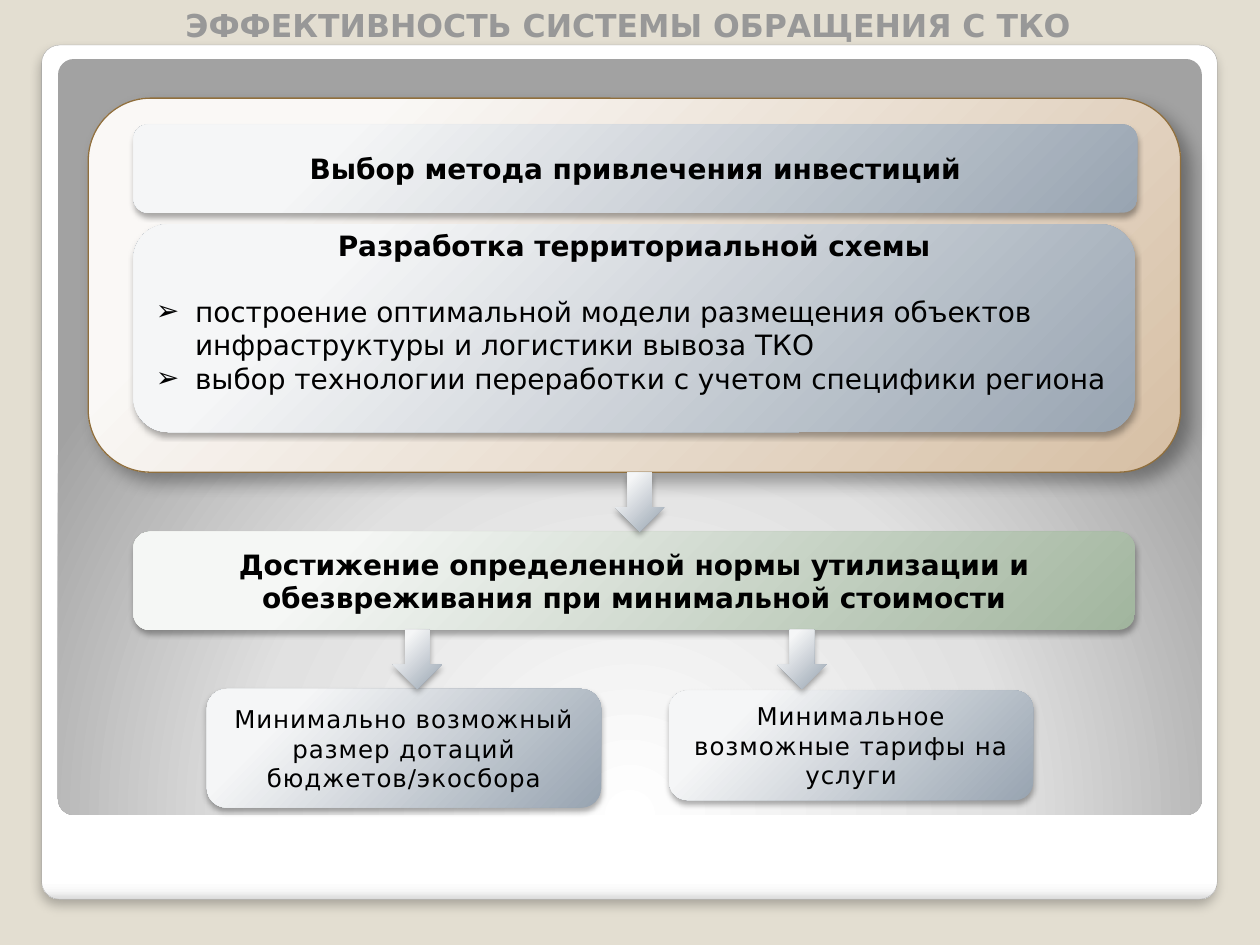
from pptx import Presentation
from pptx.dml.color import RGBColor
from pptx.enum.shapes import MSO_SHAPE
from pptx.enum.text import MSO_ANCHOR, MSO_AUTO_SIZE, PP_ALIGN
from pptx.oxml import parse_xml
from pptx.oxml.ns import nsdecls
from pptx.util import Cm, Pt

ROUNDED, ARROW = MSO_SHAPE.ROUNDED_RECTANGLE, MSO_SHAPE.DOWN_ARROW
CENTER, LEFT = PP_ALIGN.CENTER, PP_ALIGN.LEFT
MIDDLE = MSO_ANCHOR.MIDDLE
FONT = "DejaVu Sans"
COLORS = {
    "page": "E3DED1", "title": "989898", "text": "000000", "shadow": "000000",
    "card_edge": "A4A4A4", "frame_edge": "906F3D",
}
# Gradient stops: position in percent, colour
GRADIENTS = {
    "card": [(0, "FFFFFF"), (98, "FFFFFF"), (99, "F7F7F7"), (100, "DADADA")],
    "panel": [(0, "FFFFFF"), (55, "E1E1E1"), (100, "A2A2A2")],
    "sand": [(20, "FAF8F6"), (100, "D6BFA4")],
    "steel": [(20, "F5F6F7"), (100, "98A4B1")],
    "green": [(20, "F5F7F5"), (100, "A1B59E")],
}
CORNER = (-15, -15, 115, 115)
BELOW = (50, 175, 50, -75)
# Shadows: opacity percent, blur and distance in points, direction in degrees
SOFT, DEEP, CARD_SHADOW = (32, 3.5, 2.2, 90), (35, 10.2, 8, 45), (25, 6, 4, 90)
ARROW_W, ARROW_H = 0.99, 1.19


def set_gradient(shape, name, focus):
    """Fill with a circular gradient, or a downward one when focus is None."""
    stops = "".join(
        f'<a:gs pos="{pos * 1000}"><a:srgbClr val="{color}"/></a:gs>'
        for pos, color in GRADIENTS[name])
    if focus:
        sides = " ".join(f'{side}="{value * 1000}"' for side, value in zip("ltrb", focus))
        course = f'<a:path path="circle"><a:fillToRect {sides}/></a:path>'
    else:
        course = '<a:lin ang="5400000" scaled="0"/>'
    fill = parse_xml(f'<a:gradFill {nsdecls("a")} rotWithShape="1">'
                     f'<a:gsLst>{stops}</a:gsLst>{course}</a:gradFill>')
    shape._element.spPr.prstGeom.addnext(fill)


def set_shadow(shape, shadow):
    shape.shadow.inherit = False
    if shadow:
        opacity, blur, distance, angle = shadow
        effects = shape._element.spPr.find(
            "{http://schemas.openxmlformats.org/drawingml/2006/main}effectLst")
        effects.append(parse_xml(
            f'<a:outerShdw {nsdecls("a")} blurRad="{Pt(blur)}" dist="{Pt(distance)}" '
            f'dir="{angle * 60000}" algn="ctr" rotWithShape="0">'
            f'<a:srgbClr val="{COLORS["shadow"]}"><a:alpha val="{opacity * 1000}"/>'
            '</a:srgbClr></a:outerShdw>'))


def add_block(page, kind, box, gradient, focus=CORNER, shadow=SOFT, edge=None, radius=None):
    shape = page.shapes.add_shape(kind, *(Cm(value) for value in box))
    if radius:
        shape.adjustments[0] = radius
    if edge:
        color, width = edge
        shape.line.color.rgb = RGBColor.from_string(COLORS[color])
        shape.line.width = Pt(width)
    else:
        shape.line.fill.background()
    set_gradient(shape, gradient, focus)
    set_shadow(shape, shadow)
    return shape


def add_span(para, text, size, bold=False, color="text", spacing=0):
    span = para.add_run()
    span.text = text
    span.font.name = FONT
    span.font.size = Pt(size)
    span.font.bold = bold
    span.font.color.rgb = RGBColor.from_string(COLORS[color])
    if spacing:
        span._r.get_or_add_rPr().set("spc", str(int(spacing * 100)))


def add_label(page, box, gradient, text, size=16, bold=True, spacing=0):
    shape = add_block(page, ROUNDED, box, gradient)
    frame = shape.text_frame
    frame.word_wrap = True
    frame.vertical_anchor = MIDDLE
    para = frame.paragraphs[0]
    para.alignment = CENTER
    add_span(para, text, size, bold, spacing=spacing)
    return shape


def add_bullet(frame, text):
    para = frame.add_paragraph()
    para.alignment = LEFT
    props = para._p.get_or_add_pPr()
    props.set("marL", str(Cm(0.79)))
    props.set("indent", str(Cm(-0.79)))
    props.append(parse_xml(f'<a:buFont {nsdecls("a")} typeface="{FONT}"/>'))
    props.append(parse_xml(f'<a:buChar {nsdecls("a")} char="➢"/>'))
    add_span(para, text, 16)


def add_arrow(page, left, top):
    add_block(page, ARROW, (left, top, ARROW_W, ARROW_H), "steel")


def add_backdrop(page, box):
    """White card with the grey panel inside it."""
    left, top, width, height = box
    add_block(page, ROUNDED, box, "card", None, CARD_SHADOW, ("card_edge", 0.16), 0.021)
    add_block(page, ROUNDED, (left + 0.33, top + 0.28, width - 0.64, height - 1.98),
              "panel", BELOW, None, radius=0.021)


def add_title(page, box):
    title = page.shapes.add_textbox(*(Cm(value) for value in box))
    frame = title.text_frame
    frame.word_wrap = True
    frame.auto_size = MSO_AUTO_SIZE.SHAPE_TO_FIT_TEXT
    para = frame.paragraphs[0]
    para.alignment = CENTER
    add_span(para, "ЭФФЕКТИВНОСТЬ СИСТЕМЫ ОБРАЩЕНИЯ С ТКО", 18, True, "title")


def add_measures(page, box):
    """Sand frame with the investment method and the territorial scheme."""
    left, top, width, height = box
    add_block(page, ROUNDED, box, "sand", shadow=DEEP, edge=("frame_edge", 0.75))
    add_label(page, (left + 0.91, top + 0.53, width - 1.78, 1.78), "steel",
              "Выбор метода привлечения инвестиций")
    scheme = add_label(page, (left + 0.91, top + 2.54, width - 1.83, 4.19), "steel",
                       "Разработка территориальной схемы")
    frame = scheme.text_frame
    frame.margin_bottom = Cm(0.79)
    frame.paragraphs[0].space_after = Pt(18.6)
    add_bullet(frame, "построение оптимальной модели размещения объектов "
                      "инфраструктуры и логистики вывоза ТКО")
    add_bullet(frame, "выбор технологии переработки с учетом специфики региона")


def add_outcomes(page, box):
    """Two results side by side; the arrows above them are added last."""
    left, top, width, height = box
    results = [
        (0, ARROW_H, 7.95, 2.39, "Минимально возможный размер дотаций бюджетов/экосбора"),
        (9.32, 1.22, 7.34, 2.21, "Минимальное возможные тарифы на услуги"),
    ]
    for x, y, w, h, text in results:
        add_label(page, (left + x, top + y, w, h), "steel", text, 14, False, 0.5)
    for x in (3.75, 11.5):
        add_arrow(page, left + x, top)


def main():
    deck = Presentation()
    deck.slide_width, deck.slide_height = Cm(25.4), Cm(19.05)
    page = deck.slides.add_slide(deck.slide_layouts[6])
    background = page.background.fill
    background.solid()
    background.fore_color.rgb = RGBColor.from_string(COLORS["page"])

    add_backdrop(page, (0.84, 0.91, 23.7, 17.22))
    add_title(page, (3.1, 0, 19.13, 1.02))
    add_measures(page, (1.78, 1.98, 22.02, 7.54))
    add_label(page, (2.69, 10.72, 20.19, 1.98), "green",
              "Достижение определенной нормы утилизации и "
              "обезвреживания при минимальной стоимости")
    add_arrow(page, 12.4, 9.53)
    add_outcomes(page, (4.17, 12.7, 16.66, 3.58))
    deck.save("out.pptx")


if __name__ == "__main__":
    main()
